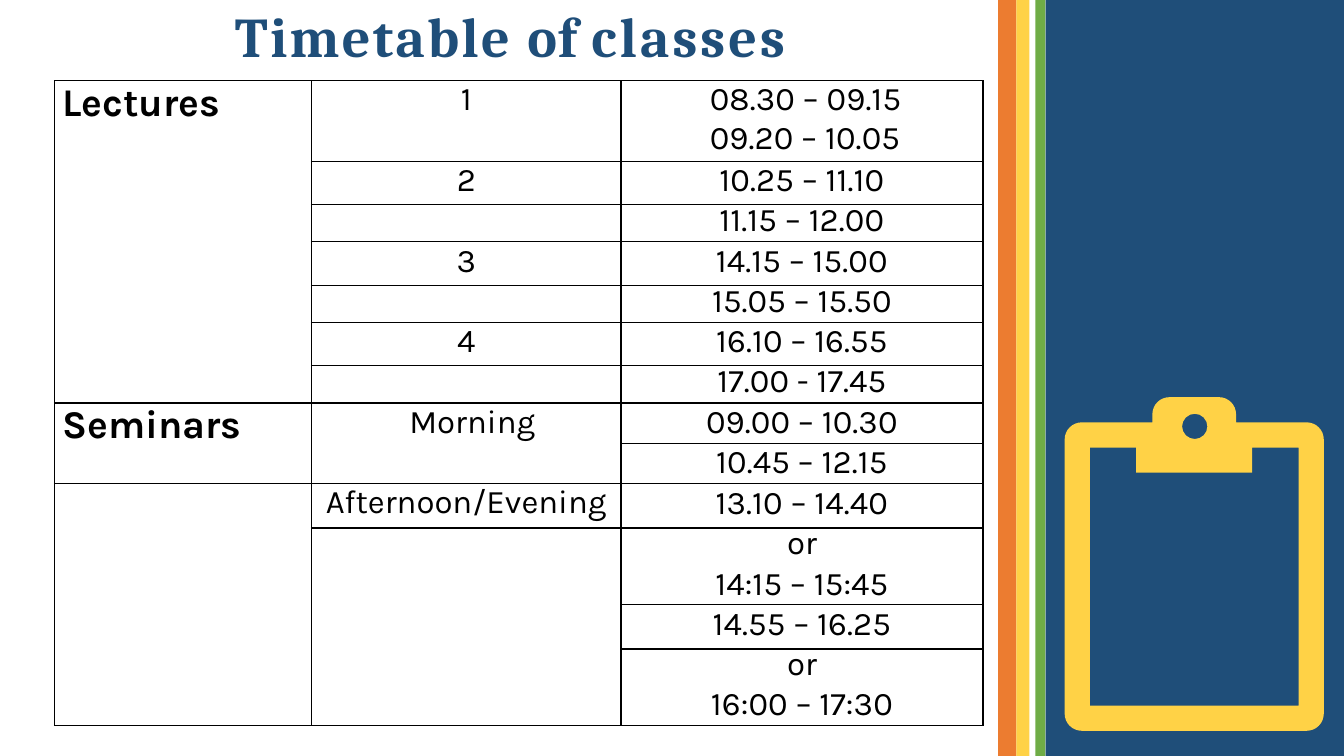
from math import cos, radians, sin

from lxml.etree import SubElement
from pptx import Presentation
from pptx.dml.color import RGBColor
from pptx.enum.shapes import MSO_SHAPE
from pptx.enum.text import MSO_ANCHOR, PP_ALIGN
from pptx.oxml.ns import qn
from pptx.util import Inches, Pt

NAVY, YELLOW, BLACK = "1F4E79", "FFD246", "000000"
TITLE = [("Timetable ", 1.7), ("of ", 0.8), ("classes", 2.2)]

# left, width, colour
STRIPES = [
    (9.9, 0.18, "EC7C30"),
    (10.08, 0.13, YELLOW),
    (10.27, 0.1, "6FAC46"),
    (10.37, 2.96, NAVY),
]

# height, class type, part, times, line spacing in points
ROWS = [
    (0.8, "Lectures", "1", ["08.30 – 09.15", "09.20 – 10.05"], 27.1),
    (0.43, "", "2", ["10.25 – 11.10"], 27.2),
    (0.37, "", "", ["11.15 – 12.00"], 25.1),
    (0.43, "", "3", ["14.15 – 15.00"], 27.4),
    (0.37, "", "", ["15.05 – 15.50"], 25.1),
    (0.43, "", "4", ["16.10 – 16.55"], 27.4),
    (0.37, "", "", ["17.00 - 17.45"], 25.1),
    (0.4, "Seminars", "Morning", ["09.00 – 10.30"], 27.5),
    (0.4, "", "", ["10.45 – 12.15"], 27.6),
    (0.44, "", "Afternoon/Evening", ["13.10 – 14.40"], 27.6),
    (0.38, "", "", ["or"], 25.1),
    (0.38, "", "", ["14:15 – 15:45"], 26.5),
    (0.44, "", "", ["14.55 – 16.25"], 27.8),
    (0.38, "", "", ["or"], 25.1),
    (0.38, "", "", ["16:00 – 17:30"], 26.4),
]
COLUMN_WIDTHS = [2.55, 3.07, 3.59]
# Rows that have a rule beneath them, for each column
RULED_ROWS = [
    {6, 8, 14},
    {0, 1, 2, 3, 4, 5, 6, 8, 9, 14},
    {0, 1, 2, 3, 4, 5, 6, 7, 8, 9, 11, 12, 14},
]
SEMINAR_ROWS = (7, 8)


def color(hex_string):
    return RGBColor.from_string(hex_string)


def paint(shape, fill):
    shape.shadow.inherit = False
    shape.fill.solid()
    shape.fill.fore_color.rgb = color(fill)
    shape.line.fill.background()


def add_run(paragraph, text, font, size, fill, bold=False, spacing=0):
    run = paragraph.add_run()
    run.text = text
    run.font.name = font
    run.font.size = Pt(size)
    run.font.bold = bold
    run.font.color.rgb = color(fill)
    run.font._element.set("spc", str(round(spacing * 100)))


def set_borders(cell, top, bottom):
    properties = cell._tc.get_or_add_tcPr()
    sides = [("a:lnL", True), ("a:lnR", True), ("a:lnT", top), ("a:lnB", bottom)]
    for index, (tag, visible) in enumerate(sides):
        line = SubElement(properties, qn(tag), w=str(Pt(1)))
        if visible:
            fill = SubElement(line, qn("a:solidFill"))
            SubElement(fill, qn("a:srgbClr"), val=BLACK)
        else:
            SubElement(line, qn("a:noFill"))
        properties.insert(index, line)


def fill_cell(cell, column, lines, spacing):
    cell.margin_left = cell.margin_right = cell.margin_top = cell.margin_bottom = 0
    cell.vertical_anchor = MSO_ANCHOR.TOP
    cell.fill.background()
    frame = cell.text_frame
    for index, text in enumerate(lines):
        paragraph = frame.paragraphs[0] if index == 0 else frame.add_paragraph()
        if not text:
            paragraph.font.size = Pt(10)
            continue
        indent = {"Lectures": 0.08, "Seminars": 0.08, "Morning": 0.97}.get(text, 0)
        if len(lines) > 1:
            indent = 0.88
        paragraph.alignment = PP_ALIGN.LEFT if indent else PP_ALIGN.CENTER
        paragraph._p.get_or_add_pPr().set("marL", str(Inches(indent)))
        if index:
            paragraph.space_before = Pt(0.7)
        elif column == 0:
            paragraph.line_spacing = Pt(32.6)
        elif column == 2 or text.isdigit():
            paragraph.line_spacing = Pt(spacing)
        add_run(paragraph, text, "Karla", 23.5 if column else 28, BLACK,
                bold=column == 0, spacing=0.1 if column == 2 else 0)


def add_timetable(slide):
    frame = slide.shapes.add_table(len(ROWS), 3, Inches(0.54), Inches(0.8),
                                   Inches(sum(COLUMN_WIDTHS)), Inches(6.4))
    table = frame.table
    table.first_row = table.horz_banding = False
    for column, width in enumerate(COLUMN_WIDTHS):
        table.columns[column].width = Inches(width)
    for row, (height, kind, part, times, spacing) in enumerate(ROWS):
        table.rows[row].height = Inches(height)
        for column, lines in enumerate(([kind], [part], times)):
            cell = table.cell(row, column)
            fill_cell(cell, column, lines, spacing)
            ruled = RULED_ROWS[column]
            set_borders(cell, row == 0 or row - 1 in ruled, row in ruled)
    first, last = SEMINAR_ROWS
    for column in (0, 1):
        table.cell(first, column).merge(table.cell(last, column))


def arc(center_x, center_y, radius, start, sweep=90):
    """Points along an arc, clockwise on the slide from the start angle."""
    angles = [radians(start + sweep * step / 8) for step in range(9)]
    return [(center_x + radius * cos(a), center_y + radius * sin(a)) for a in angles]


def add_clipboard(slide):
    left, right, top, bottom, corner = 10.56, 13.13, 4.19, 7.25, 0.17
    clip_left, clip_right, clip_top = 11.43, 12.26, 3.94
    outline = (
        arc(left + corner, top + corner, corner, 180)
        + [(clip_left, top)]
        + arc(clip_left + corner, clip_top + corner, corner, 180)
        + arc(clip_right - corner, clip_top + corner, corner, 270)
        + [(clip_right, top)]
        + arc(right - corner, top + corner, corner, 270)
        + arc(right - corner, bottom - corner, corner, 0)
        + arc(left + corner, bottom - corner, corner, 90)
    )
    page = [(10.81, 4.44), (10.81, 7), (12.88, 7), (12.88, 4.44),
            (12.42, 4.44), (12.42, 4.69), (11.27, 4.69), (11.27, 4.44)]
    hole = arc(11.85, 4.23, 0.125, 360, -180) + arc(11.85, 4.23, 0.125, 180, -180)
    contours = [[(Inches(x), Inches(y)) for x, y in points]
                for points in (outline, page, hole)]
    builder = slide.shapes.build_freeform(*contours[0][0])
    for index, points in enumerate(contours):
        if index:
            builder.move_to(*points[0])
        builder.add_line_segments(points[1:], close=True)
    paint(builder.convert_to_shape(), YELLOW)


def add_title(slide):
    box = slide.shapes.add_textbox(Inches(2.33), 0, Inches(5.64), Inches(0.7))
    frame = box.text_frame
    frame.word_wrap = True
    frame.margin_left = frame.margin_right = frame.margin_bottom = 0
    frame.margin_top = Inches(0.02)
    paragraph = frame.paragraphs[0]
    paragraph.space_before = Pt(1.4)
    for text, spacing in TITLE:
        add_run(paragraph, text, "Cambria", 40, NAVY, bold=True, spacing=spacing)


def main():
    presentation = Presentation()
    presentation.slide_width, presentation.slide_height = Inches(13.33), Inches(7.5)
    slide = presentation.slides.add_slide(presentation.slide_layouts[6])
    add_title(slide)
    for left, width, fill in STRIPES:
        stripe = slide.shapes.add_shape(MSO_SHAPE.RECTANGLE, Inches(left), 0,
                                        Inches(width), Inches(7.5))
        paint(stripe, fill)
    add_clipboard(slide)
    add_timetable(slide)
    presentation.save("out.pptx")


if __name__ == "__main__":
    main()
